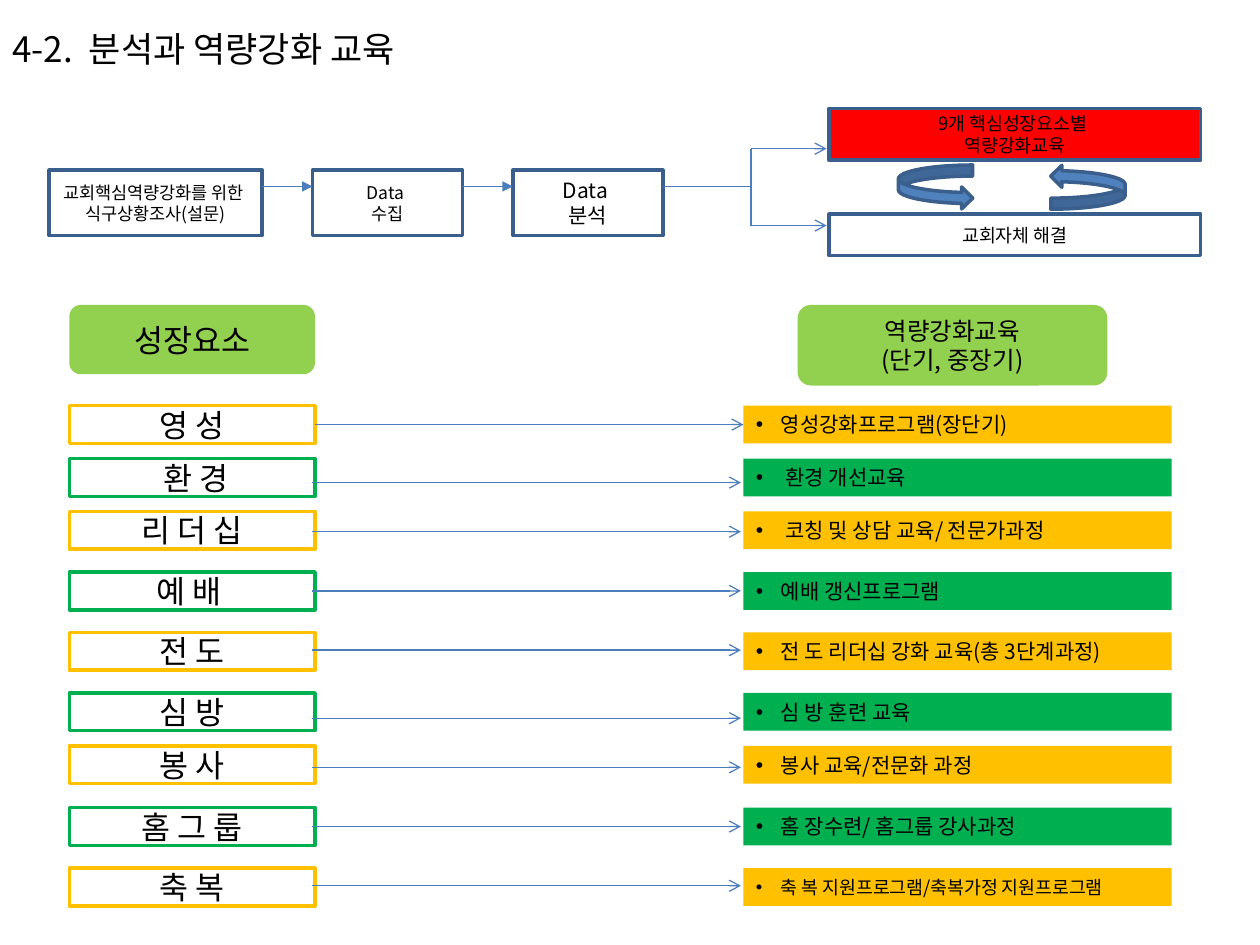
from lxml import etree
from pptx import Presentation
from pptx import util as u
from pptx.dml.color import RGBColor
from pptx.enum import shapes, text
from pptx.oxml import ns

FONT = "Noto Sans CJK KR"
BLACK = RGBColor(0x00, 0x00, 0x00)
RED = RGBColor(0xFF, 0x00, 0x00)
NAVY = RGBColor(0x3A, 0x5F, 0x8C)
BLUE = RGBColor(0x4F, 0x81, 0xBD)
LINK = RGBColor(0x4B, 0x7E, 0xBC)
AMBER = RGBColor(0xFF, 0xC0, 0x00)
GREEN = RGBColor(0x00, 0xB0, 0x50)
LIME = RGBColor(0x92, 0xD0, 0x50)
WIDTH, HEIGHT = u.Inches(10), u.Inches(7.5)
COL, ROW = WIDTH / 100, HEIGHT / 75
RECT = shapes.MSO_SHAPE.RECTANGLE
ROUND = shapes.MSO_SHAPE.ROUNDED_RECTANGLE
CURVED = shapes.MSO_SHAPE.CURVED_RIGHT_ARROW

FACTORS = [
    ("영 성", "영성강화프로그램(장단기)", 12),
    (" 환 경", " 환경 개선교육", 12),
    ("리 더 십", " 코칭 및 상담 교육/ 전문가과정", 12),
    ("예 배 ", "예배 갱신프로그램", 12),
    ("전 도", "전 도 리더십 강화 교육(총 3단계과정)", 12),
    ("심 방", "심 방 훈련 교육", 12),
    ("봉 사", "봉사 교육/전문화 과정", 12),
    ("홈 그 룹", "홈 장수련/ 홈그룹 강사과정", 12),
    ("축 복", "축 복 지원프로그램/축복가정 지원프로그램", 10.5),
]
FACTOR_TOPS = [0, 4.2, 8.4, 13.2, 18, 22.8, 27, 31.9, 36.7]
ARROW_TOPS = [1.5, 6.1, 10, 14.7, 19.4, 24.8, 28.7, 33.4, 38.1]


def grid(left, top, width, height):
    """Turn columns and rows into slide lengths."""
    return [int(n) for n in (left * COL, top * ROW, width * COL, height * ROW)]


def add_child(parent, tag, **attrs):
    """Append a DrawingML element and return it."""
    return etree.SubElement(parent, ns.qn(tag), attrs)


def style_text(tf, size, align=text.PP_ALIGN.CENTER):
    """Give every paragraph its alignment and every run its font."""
    tf.word_wrap = True
    for p in tf.paragraphs:
        p.alignment = align
        for r in p.runs:
            r.font.size = u.Pt(size)
            r.font.color.rgb = BLACK
            r.font.name = FONT
            add_child(r.font._element, "a:ea", typeface=FONT)


def add_box(s, box, label="", size=10, fill=None, line=None, kind=RECT):
    """Draw a preset shape with centred text."""
    sp = s.shapes.add_shape(kind, *grid(*box))
    sp.shadow.inherit = False
    if fill is None:
        sp.fill.background()
    else:
        sp.fill.solid()
        sp.fill.fore_color.rgb = fill
    if line is None:
        sp.line.fill.background()
    else:
        sp.line.color.rgb = line
        sp.line.width = u.Pt(2)
    tf = sp.text_frame
    tf.text = label
    tf.vertical_anchor = text.MSO_ANCHOR.MIDDLE
    style_text(tf, size)
    return sp


def add_link(s, x1, y1, x2, y2, head=None):
    """Draw a straight link with an optional arrowhead at its end."""
    ends = grid(x1, y1, x2, y2)
    link = s.shapes.add_connector(shapes.MSO_CONNECTOR.STRAIGHT, *ends)
    link.line.color.rgb = LINK
    link.line.width = u.Pt(0.75)
    if head:
        add_child(link.line._get_or_add_ln(), "a:tailEnd", type=head)
    add_child(link._element.spPr, "a:effectLst")


def add_title(s, box):
    """Write the slide title with a soft text shadow."""
    tf = s.shapes.add_textbox(*grid(*box)).text_frame
    tf.text = "4-2.  분석과 역량강화 교육"
    style_text(tf, 20, text.PP_ALIGN.LEFT)
    p = tf.paragraphs[0]
    p.line_spacing = 1.5
    p.space_before = u.Pt(8)
    rpr = p.runs[0].font._element
    effects = etree.Element(ns.qn("a:effectLst"))
    shadow = add_child(effects, "a:outerShdw", blurRad="38100",
                       dist="38100", dir="2700000")
    color = add_child(shadow, "a:srgbClr", val="000000")
    add_child(color, "a:alpha", val="43000")
    rpr.find(ns.qn("a:latin")).addprevious(effects)


def add_process(s, left, top, width, height):
    """Draw the survey steps and the two outcomes they branch into."""
    step_top, step_h, link_y = top + 4.9, 5.2, top + 6.2
    steps = [
        (0, 16.9, "교회핵심역량강화를 위한 \n식구상황조사(설문)", 10),
        (20.9, 11.9, "Data \n수집", 10),
        (36.8, 11.9, "Data \n분석", 12),
    ]
    for x, w, label, size in steps:
        add_box(s, (left + x, step_top, w, step_h), label, size, line=NAVY)
    for (x, w, *_), (following, *_) in zip(steps, steps[1:]):
        add_link(s, left + x + w, link_y, left + following, link_y, "triangle")

    outcome_w, fork = 29.5, left + 55.7
    x = left + width - outcome_w
    add_box(s, (x, top, outcome_w, 4.1), "9개 핵심성장요소별 \n역량강화교육",
            10.5, RED, NAVY)
    add_box(s, (x, top + height - 3.3, outcome_w, 3.3), "교회자체 해결",
            10.5, line=NAVY)
    branches = (top + 3.2, top + 9.3)
    add_link(s, left + 48.7, link_y, fork, link_y)
    add_link(s, fork, branches[0], fork, branches[1])
    for y in branches:
        add_link(s, fork, y, x - 0.2, y, "arrow")

    for offset, rotation in ((5.5, 0), (17.6, 180)):
        cycle = add_box(s, (x + offset, top + 4.5, 5.9, 3.5),
                        fill=BLUE, line=NAVY, kind=CURVED)
        cycle.rotation = rotation


def add_factors(s, left, top, width, height):
    """Draw the growth factors, each linked to its training programme."""
    factor_w, program_w, row_h = 19.5, 34, 3
    program_x = left + width - program_w
    add_box(s, (left, top, factor_w, 5.5), "성장요소", 18, LIME, kind=ROUND)
    add_box(s, (program_x + 4.3, top, 24.6, 6.4),
            "역량강화교육\n(단기, 중장기)", 14, LIME, kind=ROUND)
    first = top + height - FACTOR_TOPS[-1] - row_h
    rows = zip(FACTORS, FACTOR_TOPS, ARROW_TOPS)
    for i, ((factor, program, size), row, arrow) in enumerate(rows):
        color = (AMBER, GREEN)[i % 2]
        y = first + row
        add_box(s, (left, y, factor_w, row_h), factor, 18, line=color)
        sp = add_box(s, (program_x, y, program_w, row_h), program, size, color)
        p = sp.text_frame.paragraphs[0]
        p.alignment = text.PP_ALIGN.LEFT
        ppr = p._p.get_or_add_pPr()
        ppr.set("marL", str(u.Inches(0.2)))
        ppr.set("indent", str(-u.Inches(0.2)))
        add_child(ppr, "a:buFont", typeface="Arial")
        add_child(ppr, "a:buChar", char="•")
        shift = 0.2 if i else 0
        add_link(s, left + factor_w - shift, first + arrow,
                 program_x - shift, first + arrow, "arrow")


def main():
    """Build and save the slide."""
    prs = Presentation()
    prs.slide_width, prs.slide_height = WIDTH, HEIGHT
    s = prs.slides.add_slide(prs.slide_layouts[6])
    add_title(s, (0, 0, 43, 6.1))
    add_process(s, 3.9, 8.6, 91.4, 11.7)
    add_factors(s, 5.5, 24.2, 87.5, 47.7)
    prs.save("out.pptx")


if __name__ == "__main__":
    main()
